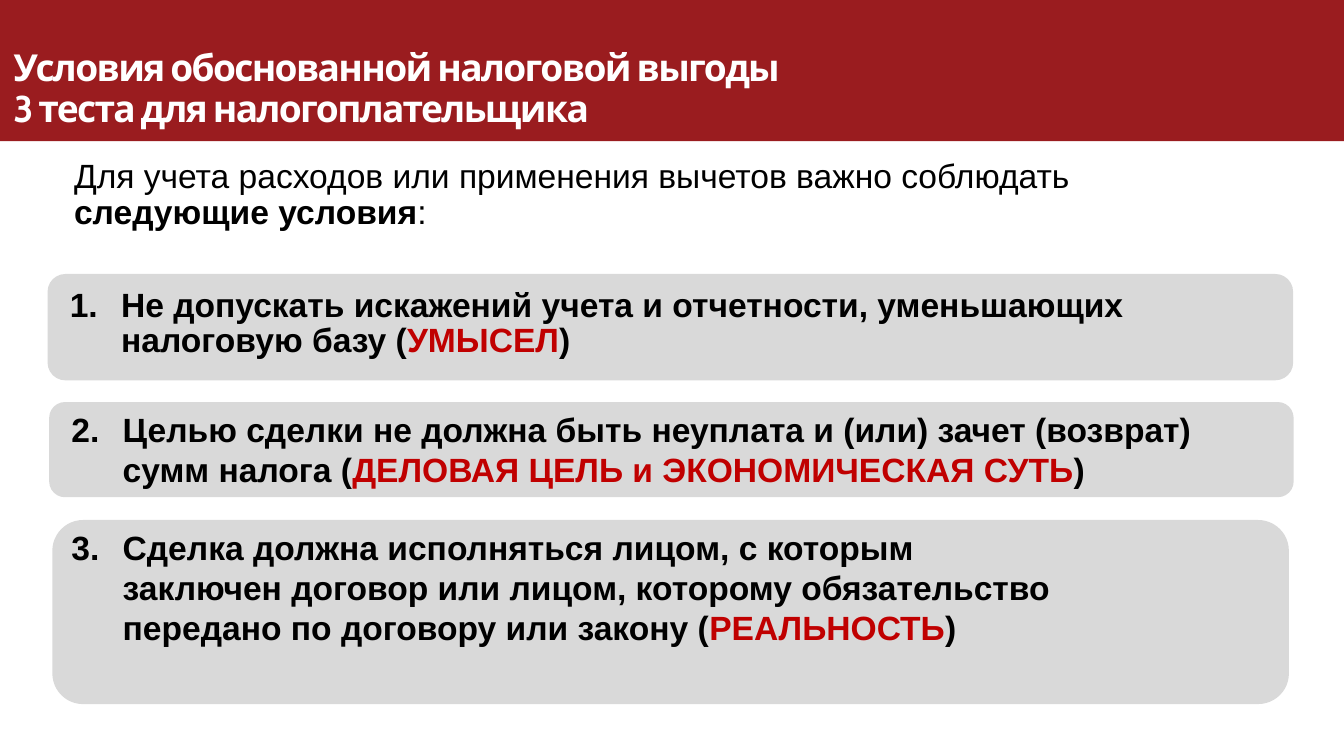
from pptx import Presentation
from pptx.dml.color import RGBColor
from pptx.enum.shapes import MSO_SHAPE as Shape
from pptx.enum.text import MSO_ANCHOR as Anchor, MSO_AUTO_SIZE as AutoSize, PP_ALIGN as Align
from pptx.util import Cm, Pt
from lxml.etree import SubElement
from pptx.oxml.ns import qn

COLORS = {"banner": "9A1C1F", "card": "D9D9D9", "text": "000000", "accent": "C00000", "title": "FFFFFF"}

deck = Presentation()
deck.slide_width, deck.slide_height = Cm(25.4), Cm(14.29)
slide = deck.slides.add_slide(deck.slide_layouts[5])


def add_panel(kind, left, top, width, height, color):
    panel = slide.shapes.add_shape(kind, Cm(left), Cm(top), Cm(width), Cm(height))
    panel.shadow.inherit = False
    panel.fill.solid()
    panel.fill.fore_color.rgb = RGBColor.from_string(COLORS[color])
    panel.line.fill.background()


def add_run(paragraph, text, color="text", bold=True, font="Arial", size=18):
    run = paragraph.add_run()
    run.text = text
    run.font.name, run.font.size, run.font.bold = font, Pt(size), bold
    run.font.color.rgb = RGBColor.from_string(COLORS[color])
    return run


add_panel(Shape.RECTANGLE, 0, 0, 25.4, 2.67, "banner")

title = slide.shapes.title
slide.shapes._spTree.append(title._element)
title.left, title.top, title.width, title.height = Cm(0), Cm(0.71), Cm(15.34), Cm(1.14)
heading = title.text_frame
heading.auto_size = AutoSize.NONE
heading.vertical_anchor = Anchor.TOP
heading.margin_top = Cm(0.2)
heading_line = heading.paragraphs[0]
heading_line.alignment = Align.LEFT
heading_line.line_spacing = Pt(22)
for number, text in enumerate(["Условия обоснованной налоговой выгоды", "3 теста для налогоплательщика"]):
    if number:
        heading_line.add_line_break()
    run = add_run(heading_line, text, "title", font="Cabin", size=19.9)
    run.font._element.set("spc", "-90")

tests = [
    ((0.9, 5.18, 23.54, 2.01), (1.19, 5.33, 20.32, 1.85), 19,
     "Не допускать искажений учета и отчетности, уменьшающих налоговую базу (", "УМЫСЕЛ"),
    ((0.93, 7.6, 23.52, 1.8), (1.22, 7.6, 21.89, 1.8), 21.5,
     "Целью сделки не должна быть неуплата и (или) зачет (возврат) сумм налога (",
     "ДЕЛОВАЯ ЦЕЛЬ и ЭКОНОМИЧЕСКАЯ СУТЬ"),
    ((0.99, 9.83, 23.37, 3.48), (1.22, 9.83, 18.87, 2.57), 21.5,
     "Сделка должна исполняться лицом, с которым заключен договор или лицом, "
     "которому обязательство передано по договору или закону (", "РЕАЛЬНОСТЬ"),
]
intro_box = (1.27, 2.9, 20.32, 1.96)
paragraphs = []
for card, box, spacing in [test[:3] for test in tests] + [(None, intro_box, 19)]:
    if card:
        add_panel(Shape.ROUNDED_RECTANGLE, *card, "card")
    frame = slide.shapes.add_textbox(*map(Cm, box)).text_frame
    frame.word_wrap = True
    frame.margin_left = frame.margin_right = frame.margin_top = frame.margin_bottom = Cm(0.13)
    frame.paragraphs[0].line_spacing = Pt(spacing)
    paragraphs.append(frame.paragraphs[0])

*conditions, intro = paragraphs
for number, (condition, test) in enumerate(zip(conditions, tests), start=1):
    add_run(condition, test[3])
    add_run(condition, test[4], "accent")
    add_run(condition, ")")
    properties = condition._p.get_or_add_pPr()
    properties.set("marL", str(Cm(0.97)))
    properties.set("indent", str(-Cm(0.97)))
    SubElement(properties, qn("a:buFont"), typeface="+mj-lt")
    SubElement(properties, qn("a:buAutoNum"), type="arabicPeriod", startAt=str(number))

add_run(intro, "Для учета расходов или применения вычетов важно соблюдать", bold=False)
intro.add_line_break()
add_run(intro, "следующие условия")
add_run(intro, ":", bold=False)

deck.save("out.pptx")
